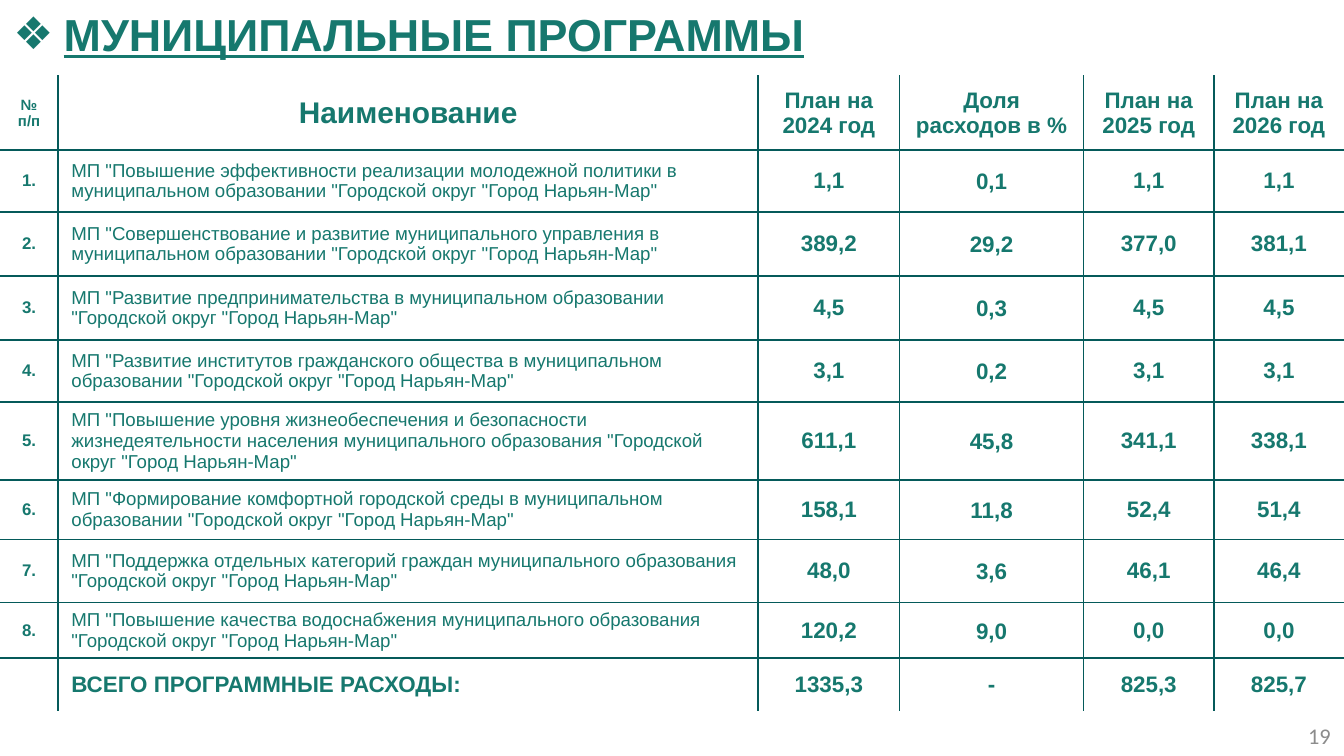
"""Build the slide that lists the municipal programmes and their budgets."""
from dataclasses import dataclass
from typing import NamedTuple

from lxml.etree import SubElement
from pptx import Presentation
from pptx.dml.color import RGBColor
from pptx.enum.text import MSO_ANCHOR, MSO_AUTO_SIZE, PP_ALIGN
from pptx.oxml.ns import qn
from pptx.util import Cm, Pt


@dataclass(frozen=True)
class Theme:
    """Hold the colours, fonts and type sizes of the slide."""
    green: str = "16786E"
    line: str = "055A5A"
    grey: str = "8C8C8C"
    font: str = "Arial"
    foot: str = "Calibri"
    title: int = 24
    name: int = 16
    value: int = 12
    item: int = 10
    index: int = 9
    label: int = 8


class Entry(NamedTuple):
    """Describe one programme with its plans and share."""
    name: str
    plan: str
    share: str
    next: str
    last: str


class Look(NamedTuple):
    """Describe how the text of one cell is set."""
    size: int
    bold: bool = True
    align: PP_ALIGN = PP_ALIGN.CENTER
    pads: tuple = (0.25, 0.1, 0.25, 0.1)


THEME = Theme()
WIDTH, HEIGHT = 25.4, 14.29
COLS = (1.1, 13.23, 2.67, 3.48, 2.46, 2.46)
ROWS = (1.4, 1.17, 1.21, 1.21, 1.17, 1.47, 1.13, 1.19, 1.04, 1.02)
CITY = '"Городской округ "Город Нарьян-Мар"'
HEADS = ("№ п/п", "Наименование", "План на 2024 год", "Доля\nрасходов в %",
         "План на 2025 год", "План на 2026 год")
TOTAL = ("", "ВСЕГО ПРОГРАММНЫЕ РАСХОДЫ:", "1335,3", "-", "825,3", "825,7")
ITEMS = (
    Entry("Повышение эффективности реализации молодежной политики в муниципальном образовании",
          "1,1", "0,1", "1,1", "1,1"),
    Entry("Совершенствование и развитие муниципального управления в муниципальном образовании",
          "389,2", "29,2", "377,0", "381,1"),
    Entry("Развитие предпринимательства в муниципальном образовании",
          "4,5", "0,3", "4,5", "4,5"),
    Entry("Развитие институтов гражданского общества в муниципальном образовании",
          "3,1", "0,2", "3,1", "3,1"),
    Entry("Повышение уровня жизнеобеспечения и безопасности жизнедеятельности населения "
          "муниципального образования", "611,1", "45,8", "341,1", "338,1"),
    Entry("Формирование комфортной городской среды в муниципальном образовании",
          "158,1", "11,8", "52,4", "51,4"),
    Entry("Поддержка отдельных категорий граждан муниципального образования",
          "48,0", "3,6", "46,1", "46,4"),
    Entry("Повышение качества водоснабжения муниципального образования",
          "120,2", "9,0", "0,0", "0,0"),
)

VALUE = Look(THEME.value)
HEAD = (Look(THEME.label), Look(THEME.name)) + (VALUE,) * 4
BODY = (Look(THEME.index), Look(THEME.item, False, PP_ALIGN.LEFT), VALUE,
        Look(THEME.value, pads=(0.03, 0.03, 0.03, 0)), VALUE, VALUE)
LAST = (VALUE, Look(THEME.value, align=PP_ALIGN.LEFT)) + (VALUE,) * 4


def add_run(para, text: str, size: int, color: str, font: str, bold: bool = False):
    """Add one styled run and return it."""
    run = para.add_run()
    run.text = text
    run.font.size = Pt(size)
    run.font.name = font
    run.font.bold = bold
    run.font.color.rgb = RGBColor.from_string(color)
    return run


def add_edge(cell, side: str) -> None:
    """Draw one border of a cell."""
    edge = SubElement(cell._tc.get_or_add_tcPr(), qn(f"a:ln{side}"), w=str(Pt(1)))
    fill = SubElement(edge, qn("a:solidFill"))
    SubElement(fill, qn("a:srgbClr"), val=THEME.line)


def fill_cell(cell, text: str, look: Look, sides: str) -> None:
    """Set the text, insets, borders and fill of a cell."""
    cell.vertical_anchor = MSO_ANCHOR.MIDDLE
    cell.margin_left, cell.margin_top, cell.margin_right, cell.margin_bottom = map(Cm, look.pads)
    for side in sides:
        add_edge(cell, side)
    cell.fill.background()
    frame = cell.text_frame
    for num, line in enumerate(text.split("\n")):
        para = frame.add_paragraph() if num else frame.paragraphs[0]
        para.alignment = look.align
        if line:
            add_run(para, line, look.size, THEME.green, THEME.font, look.bold)


def add_title(slide) -> None:
    """Format the title placeholder as a bulleted heading."""
    title = slide.shapes.title
    title.left, title.top, title.width, title.height = Cm(0), Cm(0), Cm(18.6), Cm(1.27)
    frame = title.text_frame
    frame.word_wrap = True
    frame.auto_size = MSO_AUTO_SIZE.SHAPE_TO_FIT_TEXT
    frame.vertical_anchor = MSO_ANCHOR.TOP
    para = frame.paragraphs[0]
    para.alignment = PP_ALIGN.LEFT
    props = para._p.get_or_add_pPr()
    props.set("marL", str(Cm(0.95)))
    props.set("indent", str(-Cm(0.95)))
    SubElement(props, qn("a:buFont"), typeface=THEME.font)
    SubElement(props, qn("a:buChar"), char="❖")
    run = add_run(para, "МУНИЦИПАЛЬНЫЕ ПРОГРАММЫ", THEME.title, THEME.green, THEME.font, True)
    run.font.underline = True


def add_grid(slide) -> None:
    """Add the table of programmes."""
    body = [(f"{num}.", f'МП "{item.name} {CITY}', *item[1:])
            for num, item in enumerate(ITEMS, 1)]
    lines = [HEADS, *body, TOTAL]
    looks = [HEAD, *[BODY] * len(body), LAST]
    table = slide.shapes.add_table(len(ROWS), len(COLS), Cm(0), Cm(1.44),
                                   Cm(WIDTH), Cm(sum(ROWS))).table
    table.first_row = table.horz_banding = False
    for col, width in zip(table.columns, COLS):
        col.width = Cm(width)
    for row, height in zip(table.rows, ROWS):
        row.height = Cm(height)
    for y, (texts, style) in enumerate(zip(lines, looks)):
        for x, (text, look) in enumerate(zip(texts, style)):
            shown = {"L": x > 0, "R": x < len(COLS) - 1, "T": y > 0, "B": y < len(ROWS) - 1}
            sides = "".join(side for side, on in shown.items() if on)
            fill_cell(table.cell(y, x), text, look, sides)


def add_page(slide) -> None:
    """Add the page number."""
    frame = slide.shapes.add_textbox(Cm(19.48), Cm(13.53), Cm(5.92), Cm(0.76)).text_frame
    frame.word_wrap = True
    frame.vertical_anchor = MSO_ANCHOR.MIDDLE
    para = frame.paragraphs[0]
    para.alignment = PP_ALIGN.RIGHT
    add_run(para, "19", THEME.value, THEME.grey, THEME.foot)


def main() -> None:
    """Build and save the slide."""
    deck = Presentation()
    deck.slide_width, deck.slide_height = Cm(WIDTH), Cm(HEIGHT)
    slide = deck.slides.add_slide(deck.slide_layouts[5])
    add_title(slide)
    add_grid(slide)
    add_page(slide)
    deck.save("out.pptx")


if __name__ == "__main__":
    main()
